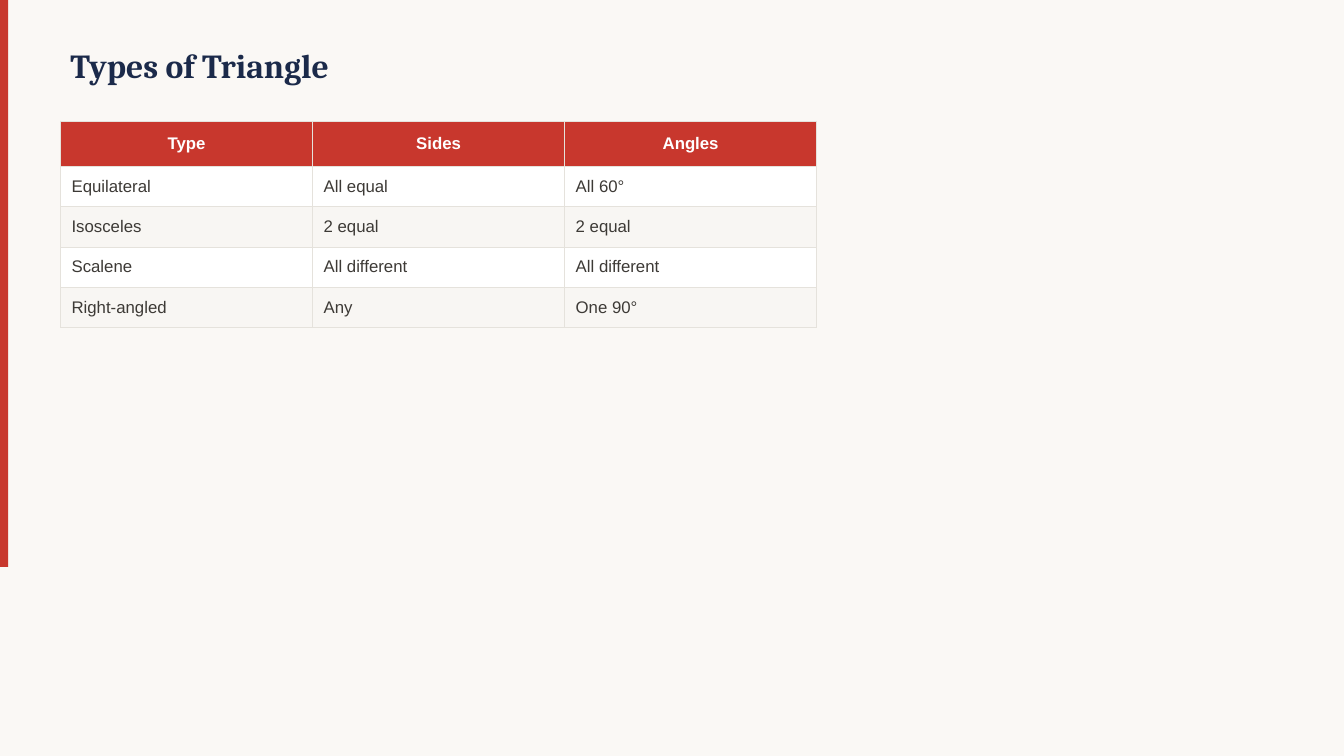
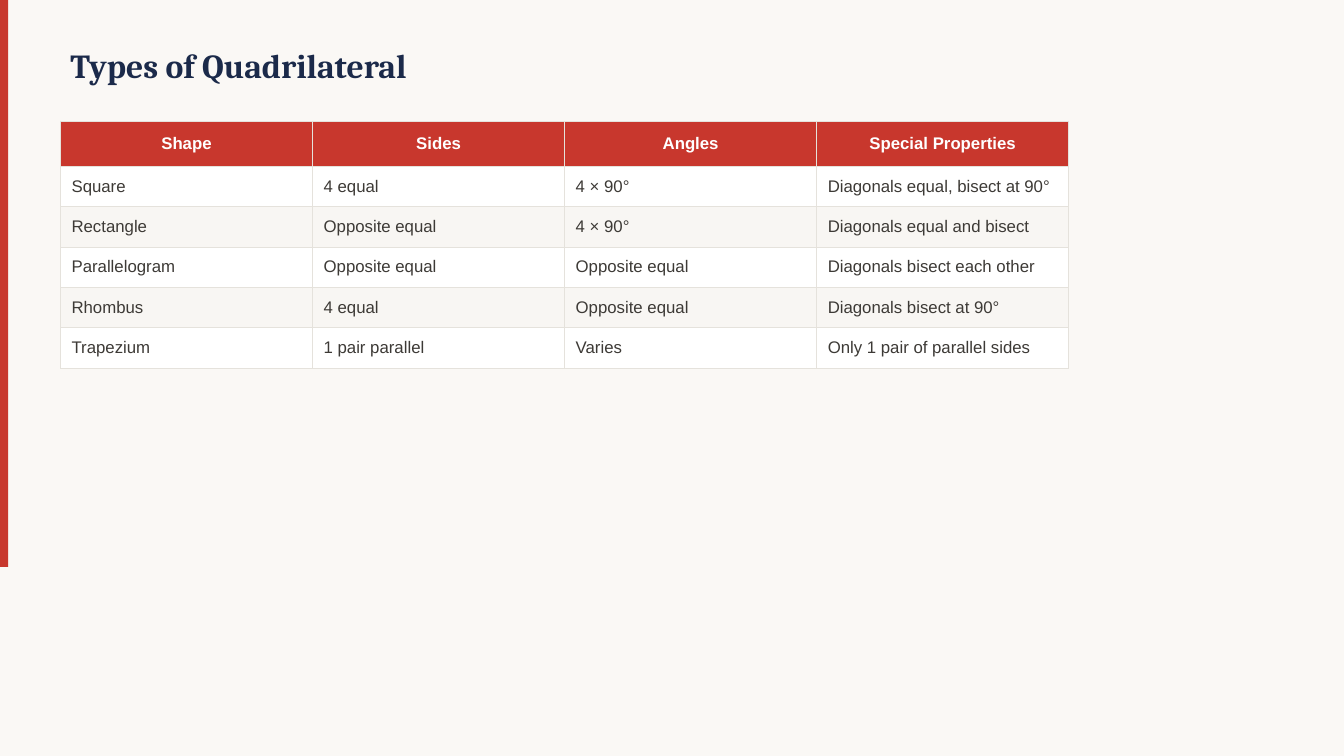
from lxml import etree
from pptx import Presentation
from pptx.dml.color import RGBColor
from pptx.enum.shapes import MSO_SHAPE
from pptx.enum.text import MSO_ANCHOR, PP_ALIGN
from pptx.oxml.ns import qn
from pptx.util import Inches, Pt

RECTANGLE = MSO_SHAPE.RECTANGLE
MIDDLE = MSO_ANCHOR.MIDDLE
LEFT, CENTER = PP_ALIGN.LEFT, PP_ALIGN.CENTER

COLORS = {
    "paper": "FAF8F5",
    "accent": "C8372D",
    "title": "1B2A4A",
    "body": "3D3A36",
    "white": "FFFFFF",
    "stripe": "F8F6F3",
    "border": "E5E2DC",
}
FORMATS = {
    "title": {"name": "Cambria", "size": Pt(24), "bold": True, "color": "title"},
    "header": {"name": "Arial", "size": Pt(12), "bold": True, "color": "white"},
    "body": {"name": "Arial", "size": Pt(12), "bold": False, "color": "body"},
}
CELL_LAYOUT = {
    "vertical_anchor": MIDDLE,
    "margin_left": Inches(0.11),
    "margin_right": Inches(0.11),
    "margin_top": Inches(0.06),
    "margin_bottom": Inches(0.06),
}
BORDER_WIDTH = Pt(0.5)
GRID = Inches(0.1)
MARGIN = 6
TITLE_TOP, TITLE_WIDTH, TITLE_HEIGHT = 3, 100, 7
TABLE_TOP, COLUMN_WIDTH = 12, 25
HEADER_HEIGHT, ROW_HEIGHT = 4.5, 4
BAND_WIDTH, BAND_SHARE = 0.8, 0.75


def grid(steps):
    return int(steps * GRID)


def rgb(color):
    return RGBColor.from_string(COLORS[color])


def paint(fill, color):
    fill.solid()
    fill.fore_color.rgb = rgb(color)


def apply(target, values):
    for attribute, value in values.items():
        if attribute == "color":
            target.color.rgb = rgb(value)
        else:
            setattr(target, attribute, value)


class Deck:
    def __init__(self):
        self.presentation = Presentation()
        self.presentation.slide_width = Inches(13.33)
        self.presentation.slide_height = Inches(7.5)
        paint(self.presentation.slide_master.background.fill, "paper")
        self.slide = None

    def add_slide(self, title):
        blank = self.presentation.slide_layouts[6]
        self.slide = self.presentation.slides.add_slide(blank)
        self.add_band()
        self.add_title(title)

    def add_band(self):
        height = int(self.presentation.slide_height * BAND_SHARE)
        band = self.slide.shapes.add_shape(RECTANGLE, 0, 0, grid(BAND_WIDTH), height)
        band.shadow.inherit = False
        paint(band.fill, "accent")
        band.line.fill.background()

    def add_title(self, text):
        bounds = map(grid, (MARGIN, TITLE_TOP, TITLE_WIDTH, TITLE_HEIGHT))
        frame = self.slide.shapes.add_textbox(*bounds).text_frame
        apply(frame, {"word_wrap": True, "vertical_anchor": MIDDLE})
        self.add_text(frame, text, "title", LEFT)

    def add_text(self, frame, text, style, alignment):
        paragraph = frame.paragraphs[0]
        paragraph.alignment = alignment
        run = paragraph.add_run()
        run.text = text
        apply(run.font, FORMATS[style])

    def add_table(self, header, *records):
        height = HEADER_HEIGHT + ROW_HEIGHT * len(records)
        bounds = map(grid, (MARGIN, TABLE_TOP, COLUMN_WIDTH * len(header), height))
        table = self.slide.shapes.add_table(
            len(records) + 1, len(header), *bounds
        ).table
        apply(table, {"first_row": False, "horz_banding": False})
        for column in table.columns:
            column.width = grid(COLUMN_WIDTH)
        for index, record in enumerate((header, *records)):
            if index == 0:
                row_height, style, fill, alignment = HEADER_HEIGHT, "header", "accent", CENTER
            else:
                fill = "white" if index % 2 else "stripe"
                row_height, style, alignment = ROW_HEIGHT, "body", LEFT
            table.rows[index].height = grid(row_height)
            for cell, text in zip(table.rows[index].cells, record):
                apply(cell, CELL_LAYOUT)
                self.add_borders(cell)
                paint(cell.fill, fill)
                self.add_text(cell.text_frame, text, style, alignment)

    def add_borders(self, cell):
        properties = cell._tc.get_or_add_tcPr()
        for side in ("lnL", "lnR", "lnT", "lnB"):
            line = etree.SubElement(properties, qn(f"a:{side}"), w=str(BORDER_WIDTH))
            fill = etree.SubElement(line, qn("a:solidFill"))
            etree.SubElement(fill, qn("a:srgbClr"), val=COLORS["border"])


def main():
    deck = Deck()

    deck.add_slide("Types of Triangle")
    deck.add_table(
        ("Type", "Sides", "Angles"),
        ("Equilateral", "All equal", "All 60°"),
        ("Isosceles", "2 equal", "2 equal"),
        ("Scalene", "All different", "All different"),
        ("Right-angled", "Any", "One 90°"),
    )

    deck.add_slide("Types of Quadrilateral")
    deck.add_table(
        ("Shape", "Sides", "Angles", "Special Properties"),
        ("Square", "4 equal", "4 × 90°", "Diagonals equal, bisect at 90°"),
        ("Rectangle", "Opposite equal", "4 × 90°", "Diagonals equal and bisect"),
        ("Parallelogram", "Opposite equal", "Opposite equal", "Diagonals bisect each other"),
        ("Rhombus", "4 equal", "Opposite equal", "Diagonals bisect at 90°"),
        ("Trapezium", "1 pair parallel", "Varies", "Only 1 pair of parallel sides"),
    )

    deck.presentation.save("out.pptx")


if __name__ == "__main__":
    main()
